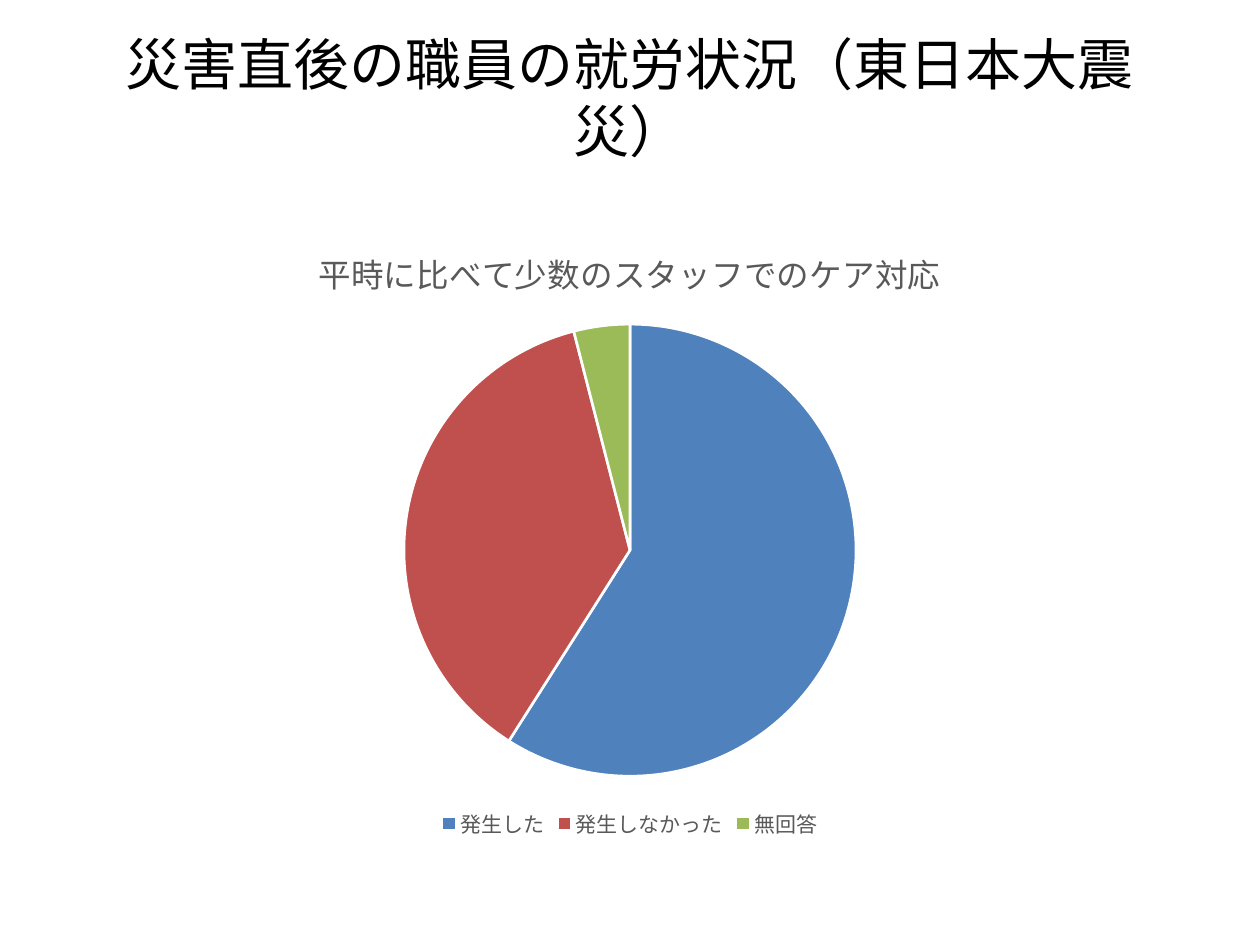
from pptx import Presentation
from pptx.chart.data import CategoryChartData
from pptx.dml.color import RGBColor
from pptx.enum.chart import XL_CHART_TYPE, XL_LEGEND_POSITION
from pptx.enum.text import MSO_ANCHOR, PP_ALIGN
from pptx.util import Cm, Pt

PIE = XL_CHART_TYPE.PIE
BOTTOM = XL_LEGEND_POSITION.BOTTOM
MIDDLE = MSO_ANCHOR.MIDDLE
CENTER = PP_ALIGN.CENTER

TITLE = "災害直後の職員の就労状況（東日本大震災）"
TOPIC = "平時に比べて少数のスタッフでのケア対応"
PARTS = [
    ("発生した", 59, "4F81BD"),
    ("発生しなかった", 37, "C0504D"),
    ("無回答", 4, "9BBB59"),
]
FONT = "Calibri"
GREY = "595959"
WIDE, HIGH, EDGE = 25.4, 19.05, 1.27


def color(code):
    return RGBColor.from_string(code)


def style(font, size, code):
    font.name = FONT
    font.size = Pt(size)
    font.bold = False
    font.color.rgb = color(code)


def write(frame, text, size, code):
    para = frame.paragraphs[0]
    para.alignment = CENTER
    run = para.add_run()
    run.text = text
    style(run.font, size, code)


def place(top, height):
    """Return the box of a full-width part between the side margins."""
    return Cm(EDGE), Cm(top), Cm(WIDE - 2 * EDGE), Cm(height)


def add_title(slide):
    title = slide.shapes.title
    title.left, title.top, title.width, title.height = place(0.76, 2.36)
    frame = title.text_frame
    frame.word_wrap = True
    frame.vertical_anchor = MIDDLE
    write(frame, TITLE, 32, "000000")


def add_pie(slide):
    names, values, fills = zip(*PARTS)
    data = CategoryChartData()
    data.categories = names
    data.add_series(TOPIC, values)
    chart = slide.shapes.add_chart(PIE, *place(4.45, 12.57), data).chart
    style(chart.font, 10, "000000")

    chart.has_title = True
    write(chart.chart_title.text_frame, TOPIC, 18.6, GREY)
    chart.chart_title.include_in_layout = False

    chart.has_legend = True
    chart.legend.position = BOTTOM
    chart.legend.include_in_layout = False
    style(chart.legend.font, 12, GREY)

    plot = chart.plots[0]
    plot.vary_by_categories = True
    for i, fill in enumerate(fills):
        look = plot.series[0].points[i].format
        look.fill.solid()
        look.fill.fore_color.rgb = color(fill)
        look.line.color.rgb = color("FFFFFF")
        look.line.width = Pt(1.5)


def main():
    deck = Presentation()
    deck.slide_width, deck.slide_height = Cm(WIDE), Cm(HIGH)
    slide = deck.slides.add_slide(deck.slide_layouts[5])
    add_title(slide)
    add_pie(slide)
    deck.save("out.pptx")


if __name__ == "__main__":
    main()
